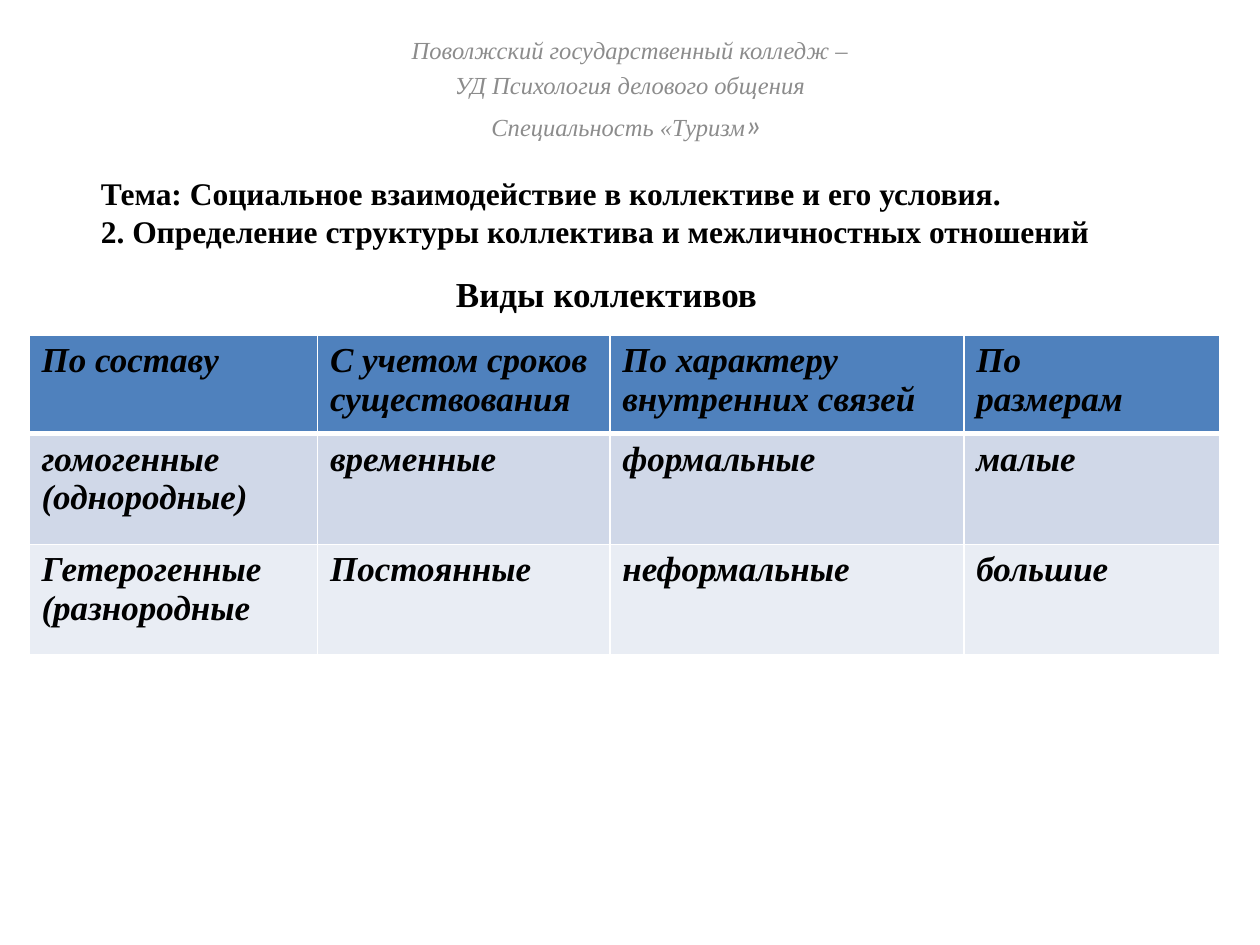
import dataclasses

import pptx
import pptx.dml.color
import pptx.enum.text
import pptx.oxml
import pptx.oxml.ns
import pptx.util

Inches = pptx.util.Inches
Pt = pptx.util.Pt
Align = pptx.enum.text.PP_ALIGN


@dataclasses.dataclass(frozen=True)
class Theme:
    font: str = "Times New Roman"
    quote_font: str = "Calibri"
    text: str = "000000"
    muted: str = "8C8C8C"
    border: str = "FFFFFF"
    row_fills: tuple = ("4F81BD", "D0D8E8", "E9EDF4")
    header_size: int = 14
    topic_size: int = 18
    table_size: int = 20


THEME = Theme()

HEADER_LINES = [
    "Поволжский государственный колледж –",
    "УД Психология делового общения",
    "Специальность «Туризм",
]
TOPIC_LINES = [
    "Тема: Социальное взаимодействие в коллективе и его условия.",
    "2. Определение структуры коллектива и межличностных отношений",
]
TABLE_ROWS = [
    ["По составу", "С учетом сроков существования",
     "По характеру внутренних связей", "По\nразмерам"],
    ["гомогенные\n(однородные)", "временные", "формальные", "малые"],
    ["Гетерогенные\n(разнородные", "Постоянные", "неформальные", "большие"],
]
COLUMN_WIDTHS = [2.29, 2.32, 2.81, 2.03]
ROW_HEIGHTS = [0.78, 0.88, 0.88]


def color(value):
    return pptx.dml.color.RGBColor.from_string(value)


def add_run(paragraph, text, *, size, font=THEME.font, fill=THEME.text,
            bold=False, italic=False):
    run = paragraph.add_run()
    run.text = text
    run.font.name = font
    run.font.size = Pt(size)
    run.font.bold = bold
    run.font.italic = italic
    run.font.color.rgb = color(fill)


def write_lines(text_frame, lines, *, align=Align.LEFT, **text_format):
    """Put each line in its own paragraph and return the last paragraph."""
    for index, line in enumerate(lines):
        paragraph = text_frame.paragraphs[0] if index == 0 else text_frame.add_paragraph()
        paragraph.alignment = align
        add_run(paragraph, line, **text_format)
    return paragraph


def place(shape, box):
    """Move a text shape into its box and return its text frame."""
    shape.left, shape.top, shape.width, shape.height = map(Inches, box)
    text_frame = shape.text_frame
    text_frame.word_wrap = True
    text_frame.auto_size = pptx.enum.text.MSO_AUTO_SIZE.SHAPE_TO_FIT_TEXT
    text_frame.vertical_anchor = pptx.enum.text.MSO_ANCHOR.TOP
    return text_frame


def fill_header(slide, box):
    style = dict(fill=THEME.muted, italic=True)
    last = write_lines(place(slide.placeholders[1], box), HEADER_LINES,
                       align=Align.CENTER, size=THEME.header_size, **style)
    add_run(last, "» ", size=THEME.topic_size, font=THEME.quote_font, **style)


def fill_topic(slide, box):
    write_lines(place(slide.shapes.title, box), TOPIC_LINES,
                size=THEME.topic_size, bold=True)


def add_caption(slide, box):
    text_frame = place(slide.shapes.add_textbox(0, 0, 0, 0), box)
    write_lines(text_frame, ["Виды коллективов"], size=THEME.table_size, bold=True)


def set_borders(cell, widths):
    """Draw left, right, top and bottom borders of the given point widths."""
    properties = cell._tc.get_or_add_tcPr()
    for index, (side, width) in enumerate(zip("LRTB", widths)):
        line = pptx.oxml.parse_xml(
            f'<a:ln{side} {pptx.oxml.ns.nsdecls("a")} w="{Pt(width)}">'
            f'<a:solidFill><a:srgbClr val="{THEME.border}"/></a:solidFill></a:ln{side}>')
        properties.insert(index, line)


def add_types_table(slide, box):
    table = slide.shapes.add_table(
        len(TABLE_ROWS), len(COLUMN_WIDTHS), *map(Inches, box)).table
    for column, width in zip(table.columns, COLUMN_WIDTHS):
        column.width = Inches(width)
    for row_index, texts in enumerate(TABLE_ROWS):
        table.rows[row_index].height = Inches(ROW_HEIGHTS[row_index])
        top = 3 if row_index == 1 else 1
        bottom = 3 if row_index == 0 else 1
        for column_index, text in enumerate(texts):
            cell = table.cell(row_index, column_index)
            cell.fill.solid()
            cell.fill.fore_color.rgb = color(THEME.row_fills[row_index])
            set_borders(cell, (1, 1, top, bottom))
            write_lines(cell.text_frame, text.split("\n"),
                        size=THEME.table_size, bold=True, italic=True)


def main():
    presentation = pptx.Presentation()
    presentation.slide_width = Inches(10)
    presentation.slide_height = Inches(7.5)
    slide = presentation.slides.add_slide(presentation.slide_layouts[0])
    fill_header(slide, (2.5, 0.23, 5, 0.98))
    fill_topic(slide, (0.7, 1.33, 8.67, 0.71))
    add_types_table(slide, (0.23, 2.66, sum(COLUMN_WIDTHS), sum(ROW_HEIGHTS)))
    add_caption(slide, (3.52, 2.11, 3.05, 0.44))
    presentation.save("out.pptx")


if __name__ == "__main__":
    main()
